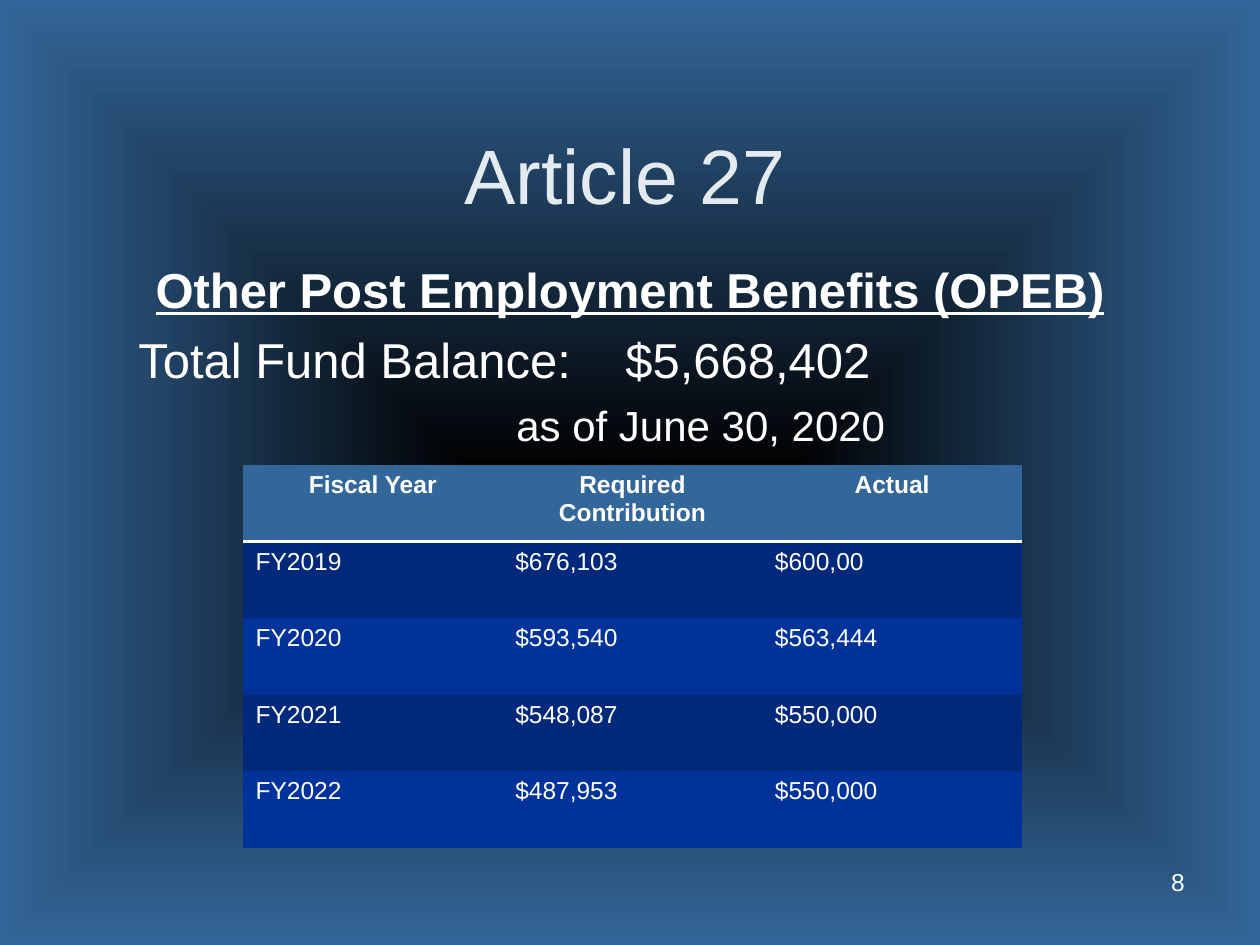
from dataclasses import dataclass

from lxml.etree import SubElement
from pptx import Presentation
from pptx.dml.color import RGBColor
from pptx.enum.text import MSO_ANCHOR, PP_ALIGN
from pptx.oxml.ns import qn
from pptx.util import Emu, Pt


@dataclass(frozen=True)
class Theme:
    font: str = "Arial"
    white: str = "FFFFFF"
    title: str = "E3EBF1"
    core: str = "000000"
    steel: str = "336699"
    bands: tuple = ("00297B", "003399")
    title_size: int = 44
    body_size: int = 28
    date_size: int = 24
    small_size: int = 14


THEME = Theme()
PX = 914400 / 126

ROWS = [
    ("Fiscal Year", "Required Contribution", "Actual"),
    ("FY2019", "$676,103", "$600,00"),
    ("FY2020", "$593,540", "$563,444"),
    ("FY2021", "$548,087", "$550,000"),
    ("FY2022", "$487,953", "$550,000"),
]


def px(count):
    return Emu(round(count * PX))


def paint_back(slide):
    """Fill the background with a gradient that spreads from the centre."""
    fill = slide.background.fill
    fill.gradient()
    for stop, color in zip(fill.gradient_stops, (THEME.core, THEME.steel)):
        stop.color.rgb = RGBColor.from_string(color)
    grad = slide.element.find(".//" + qn("a:gradFill"))
    grad.remove(grad.find(qn("a:lin")))
    shade = SubElement(grad, qn("a:path"), {"path": "shape"})
    SubElement(shade, qn("a:fillToRect"), {side: "50000" for side in "ltrb"})


def add_run(para, text, size, color=THEME.white, bold=False, underline=False):
    run = para.add_run()
    run.text = text
    font = run.font
    font.name, font.size = THEME.font, Pt(size)
    font.bold, font.underline = bold, underline
    font.color.rgb = RGBColor.from_string(color)


def add_box(slide, left, top, width, height, anchor=MSO_ANCHOR.TOP):
    box = slide.shapes.add_textbox(px(left), px(top), px(width), px(height))
    frame = box.text_frame
    frame.word_wrap = True
    frame.vertical_anchor = anchor
    return frame


def add_line(frame, indent=0, tab=None):
    """Append a spaced paragraph with an optional indent and tab stop."""
    para = frame.add_paragraph()
    props = para._p.get_or_add_pPr()
    props.set("marL", str(px(indent)))
    if tab:
        stops = SubElement(props, qn("a:tabLst"))
        SubElement(stops, qn("a:tab"), {"pos": str(px(tab)), "algn": "l"})
    para.space_before = Pt(6.5)
    return para


def add_body(slide):
    frame = add_box(slide, 126, 253, 1008, 587)
    head = frame.paragraphs[0]
    head.alignment = PP_ALIGN.CENTER
    add_run(head, "Other Post Employment Benefits (OPEB)", THEME.body_size,
            bold=True, underline=True)
    fund = add_line(frame, tab=487)
    add_run(fund, "Total Fund Balance:\t$5,668,402", THEME.body_size)
    date = add_line(frame, indent=378)
    add_run(date, "as of June 30, 2020", THEME.date_size)


def add_rule(cell):
    """Draw the line below a header cell."""
    line = SubElement(cell._tc.get_or_add_tcPr(), qn("a:lnB"), {"w": str(Pt(2))})
    fill = SubElement(line, qn("a:solidFill"))
    SubElement(fill, qn("a:srgbClr"), {"val": THEME.white})


def add_grid(slide):
    shape = slide.shapes.add_table(len(ROWS), len(ROWS[0]),
                                   px(243), px(465), px(779), px(383))
    table = shape.table
    style = shape._element.find(".//" + qn("a:tableStyleId"))
    style.text = "{2D5ABB26-0587-4C30-8999-92F81FD0307C}"  # no style, no grid
    for row, texts in enumerate(ROWS):
        header = row == 0
        color = THEME.steel if header else THEME.bands[(row - 1) % 2]
        for col, text in enumerate(texts):
            cell = table.cell(row, col)
            para = cell.text_frame.paragraphs[0]
            add_run(para, text, THEME.small_size, bold=header)
            if header:
                para.alignment = PP_ALIGN.CENTER
                add_rule(cell)
            cell.fill.solid()
            cell.fill.fore_color.rgb = RGBColor.from_string(color)


def add_title(slide):
    para = add_box(slide, 126, 116, 998, 116, MSO_ANCHOR.MIDDLE).paragraphs[0]
    para.alignment = PP_ALIGN.CENTER
    add_run(para, "Article 27", THEME.title_size, THEME.title)


def add_number(slide):
    para = add_box(slide, 903, 861, 294, 66).paragraphs[0]
    para.alignment = PP_ALIGN.RIGHT
    add_run(para, "8", THEME.small_size)


def main():
    deck = Presentation()
    deck.slide_width, deck.slide_height = px(1260), px(945)
    slide = deck.slides.add_slide(deck.slide_layouts[6])
    paint_back(slide)
    add_title(slide)
    add_body(slide)
    add_grid(slide)
    add_number(slide)
    deck.save("out.pptx")


if __name__ == "__main__":
    main()
